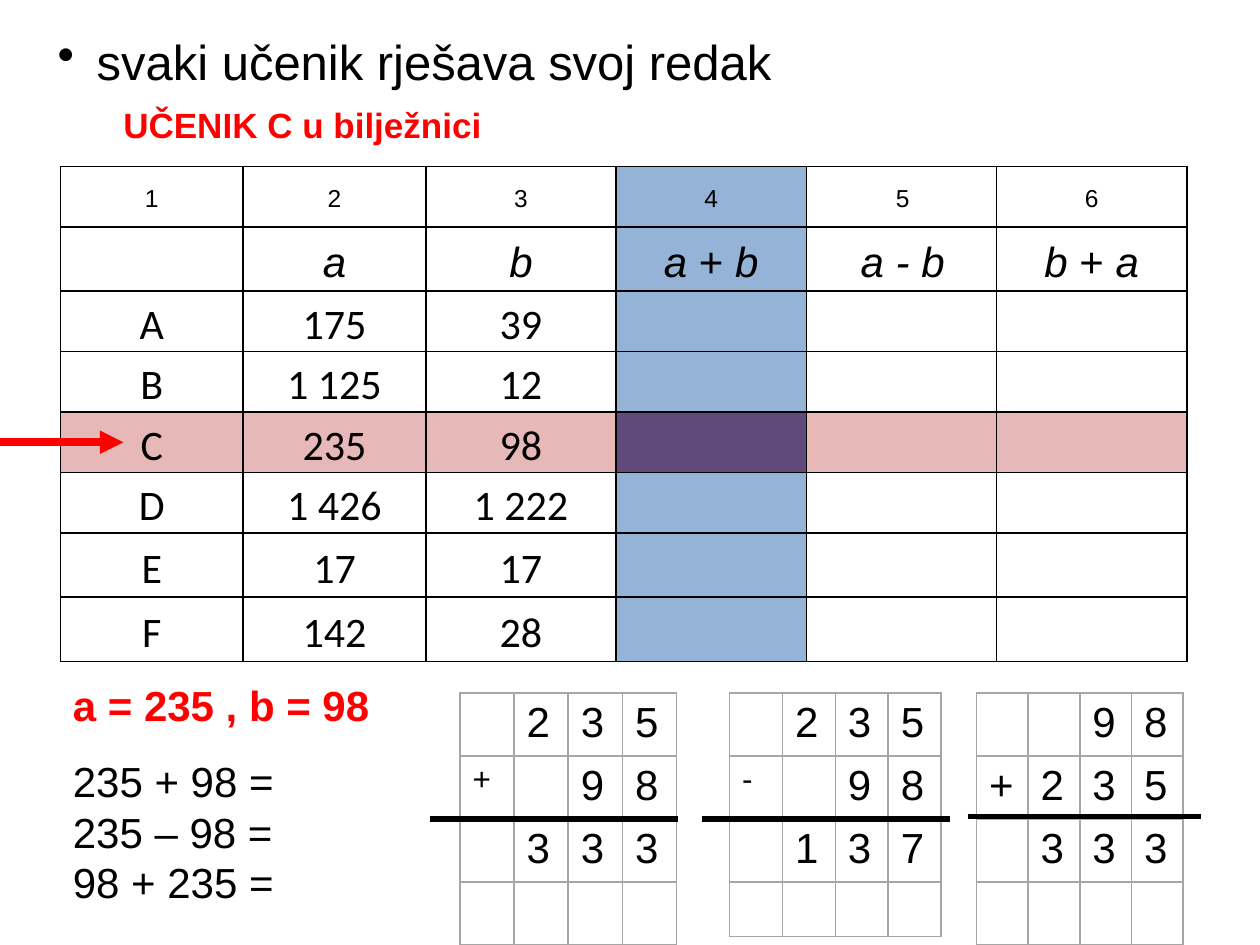
from lxml import etree
from pptx import Presentation
from pptx import util as u
from pptx.dml.color import RGBColor
from pptx.enum import shapes, text
from pptx.oxml import ns

BLACK = RGBColor(0x00, 0x00, 0x00)
RED = RGBColor(0xFF, 0x00, 0x00)
GRAY = RGBColor(0xA6, 0xA6, 0xA6)
BLUE = RGBColor(0x95, 0xB3, 0xD7)
PINK = RGBColor(0xE6, 0xB9, 0xB8)
PLUM = RGBColor(0x60, 0x4A, 0x7B)

HEADS = [["1", "2", "3", "4", "5", "6"],
         ["", "a", "b", "a + b", "a - b", "b + a"]]
PAIRS = [("A", "175", "39"), ("B", "1 125", "12"), ("C", "235", "98"),
         ("D", "1 426", "1 222"), ("E", "17", "17"), ("F", "142", "28")]
MARK_ROW, MARK_COL = 4, 3
SUMS = [
    (3.65, 0.43, 0.5, 18, [" 235", "+ 98", " 333"], (3.41, 5.38, 6.5)),
    (5.79, 0.42, 0.43, 18, [" 235", "- 98", " 137"], (5.57, 7.54, 6.5)),
    (7.75, 0.41, 0.5, 24, ["  98", "+235", " 333"], (7.68, 9.53, 6.48)),
]


class Board:
    """Holds the style and the current slide, and draws each kind of element."""

    def __init__(self, slide, face="Arial"):
        self.slide = slide
        self.face = face

    def font(self, para, size, color=BLACK, bold=False, face=None):
        font = para.font
        font.name = face or self.face
        font.size = u.Pt(size)
        font.bold = bold
        font.color.rgb = color

    def indent(self, para, left, first):
        props = para._p.get_or_add_pPr()
        props.set("marL", str(u.Inches(left)))
        props.set("indent", str(u.Inches(first)))
        return props

    def text(self, x, y, w, h, lines, size, color=BLACK, bold=False, dot=False):
        frame = self.slide.shapes.add_textbox(
            u.Inches(x), u.Inches(y), u.Inches(w), u.Inches(h)).text_frame
        frame.word_wrap = True
        for n, line in enumerate(lines):
            para = frame.add_paragraph() if n else frame.paragraphs[0]
            para.add_run().text = line
            if dot:
                props = self.indent(para, 0.31, -0.31)
                etree.SubElement(props, ns.qn("a:buChar"), char="•")
            self.font(para, size, color, bold)

    def grid(self, x, y, cols, rows, edge):
        shape = self.slide.shapes.add_table(
            len(rows), len(cols), u.Inches(x), u.Inches(y),
            u.Inches(sum(cols)), u.Inches(sum(rows)))
        table = shape.table
        table.first_row = table.horz_banding = False
        for col, size in zip(table.columns, cols):
            col.width = u.Inches(size)
        for row, size in zip(table.rows, rows):
            row.height = u.Inches(size)
        for cell in table.iter_cells():
            cell.fill.background()
            self.edge(cell, edge)
        return table

    def edge(self, cell, color):
        props = cell._tc.get_or_add_tcPr()
        for n, side in enumerate("LRTB"):
            line = etree.Element(ns.qn(f"a:ln{side}"), w=str(u.Pt(1)))
            fill = etree.SubElement(line, ns.qn("a:solidFill"))
            etree.SubElement(fill, ns.qn("a:srgbClr"), val=str(color))
            props.insert(n, line)

    def main(self):
        rows = [0.48, 0.51] + [0.48] * 4 + [0.51] * 2
        table = self.grid(0.48, 1.32, [1.45] * 2 + [1.51] * 4, rows, BLACK)
        for r, words in enumerate(HEADS + PAIRS):
            for c, word in enumerate(words):
                if word:
                    self.entry(table.cell(r, c), word, r, c)
        for r in range(len(rows)):
            self.fill(table.cell(r, MARK_COL), BLUE)
        for c in range(len(table.columns)):
            self.fill(table.cell(MARK_ROW, c), PLUM if c == MARK_COL else PINK)

    def entry(self, cell, word, r, c):
        cell.vertical_anchor = text.MSO_ANCHOR.MIDDLE
        cell.margin_left = cell.margin_right = u.Inches(0.07)
        cell.margin_top = cell.margin_bottom = 0
        para = cell.text_frame.paragraphs[0]
        if c == 4:
            self.indent(para, 0.25, -0.23)
        self.font(para, 24 if r else 14, face=None if r < 2 else "Calibri")
        para.alignment = text.PP_ALIGN.CENTER
        para.line_spacing = 1.15
        para.font.italic = r == 1
        for part in filter(None, word.partition(" + ")):
            run = para.add_run()
            run.text = part
            if part == " + ":
                run.font.italic = False

    def fill(self, cell, color):
        cell.fill.solid()
        cell.fill.fore_color.rgb = color

    def sum(self, x, wide, last, size, words):
        table = self.grid(x, 5.5, [wide] * 4, [0.5] * 3 + [last], GRAY)
        for r, word in enumerate(words):
            for c, sign in enumerate(word):
                if sign != " ":
                    para = table.cell(r, c).text_frame.paragraphs[0]
                    para.add_run().text = sign
                    self.font(para, 24 if c else size)

    def line(self, start, end, y, color=BLACK, width=3, arrow=False):
        line = self.slide.shapes.add_connector(
            shapes.MSO_CONNECTOR.STRAIGHT,
            u.Inches(start), u.Inches(y), u.Inches(end), u.Inches(y))
        line.line.color.rgb = color
        line.line.width = u.Pt(width)
        if arrow:
            etree.SubElement(line.line._get_or_add_ln(),
                             ns.qn("a:tailEnd"), type="triangle")
        etree.SubElement(line._element.spPr, ns.qn("a:effectLst"))


def main():
    deck = Presentation()
    deck.slide_width = u.Inches(10)
    deck.slide_height = u.Inches(7.5)
    board = Board(deck.slides.add_slide(deck.slide_layouts[6]))
    board.main()
    board.text(0.36, 0.2, 6.67, 0.57, ["svaki učenik rješava svoj redak"], 28, dot=True)
    board.text(0.48, 5.34, 2.81, 0.91, ["a = 235 , b = 98"], 24, RED, True)
    board.text(0.48, 5.95, 2.36, 1.72, ["235 + 98 =", "235 – 98 =", "98 + 235 ="], 24)
    board.text(0.88, 0.77, 4.82, 0.44, ["UČENIK C u bilježnici"], 20, RED, True)
    for *spot, words, rule in SUMS:
        board.sum(*spot, words)
        board.line(*rule)
    board.line(0, 0.98, 3.51, RED, 4.5, arrow=True)
    deck.save("out.pptx")


if __name__ == "__main__":
    main()
